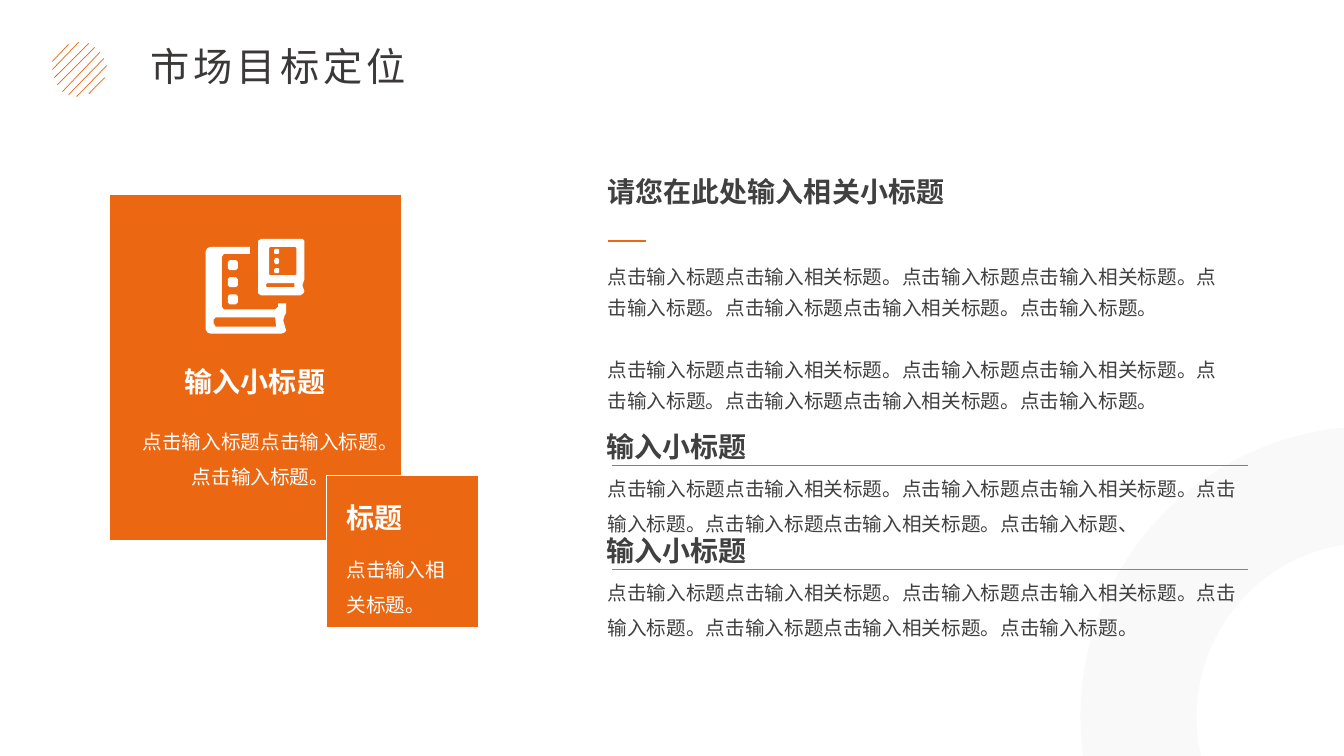
from dataclasses import dataclass

from lxml import etree
from pptx import Presentation
from pptx import util as u
from pptx.dml import color
from pptx.enum import lang, shapes, text
from pptx.oxml import ns

Pt = u.Pt


@dataclass(frozen=True)
class Theme:
    font: str = "Arial"
    orange: str = "EC6712"
    white: str = "FFFFFF"
    ink: str = "404040"
    title_ink: str = "3B3838"
    gray: str = "7F7F7F"
    pale: str = "F2F2F2"
    title: int = 28
    heading: int = 20
    body: int = 14


THEME = Theme()
SENTENCE = "点击输入标题点击输入相关标题。"
BODY = SENTENCE * 2 + "点击输入标题。" + SENTENCE + "点击输入标题"
STRIPES = [
    (37.4, 49.7, 56.2, 30.2), (38.9, 55.4, 63.4, 31),
    (41, 60.5, 67.7, 33.8), (44.6, 65.5, 71.3, 37.4),
    (49, 67.7, 74.2, 41.8), (54.7, 69.1, 76.3, 46.8),
    (63.4, 67, 74.9, 55.4), (37.4, 43.9, 49, 31.7),
]


def rgb(value):
    return color.RGBColor.from_string(value)


def add_text(container, box, paragraphs, size, ink, bold=False, spacing=None,
             centered=False, wrap=True, gap=0, tracking=0):
    shape = container.add_textbox(*map(Pt, box))
    frame = shape.text_frame
    frame.word_wrap = wrap
    frame.auto_size = text.MSO_AUTO_SIZE.SHAPE_TO_FIT_TEXT
    for index, words in enumerate(paragraphs):
        paragraph = frame.add_paragraph() if index else frame.paragraphs[0]
        if index:
            paragraph.space_before = Pt(gap)
        if spacing:
            paragraph.line_spacing = spacing
        if centered:
            paragraph.alignment = text.PP_ALIGN.CENTER
        run = paragraph.add_run()
        run.text = words
        font = run.font
        font.name = THEME.font
        font.size = Pt(size)
        font.bold = bold
        font.color.rgb = rgb(ink)
        font.language_id = lang.MSO_LANGUAGE_ID.SIMPLIFIED_CHINESE
        properties = run._r.get_or_add_rPr()
        etree.SubElement(properties, ns.qn("a:ea"), typeface=THEME.font)
        if tracking:
            properties.set("spc", str(tracking * 100))


def add_heading(container, box, words, ink, **options):
    add_text(container, box, [words], THEME.heading, ink, bold=True, **options)


def add_body(container, box, paragraphs, ink, spacing=1.5, **options):
    add_text(container, box, paragraphs, THEME.body, ink, spacing=spacing, **options)


def add_line(container, ends, ink, width):
    line = container.add_connector(shapes.MSO_CONNECTOR.STRAIGHT, *map(Pt, ends))
    line.line.color.rgb = rgb(ink)
    line.line.width = Pt(width)
    etree.SubElement(line._element.spPr, ns.qn("a:effectLst"))


def paint(shape, fill, outline=None, width=0):
    shape.shadow.inherit = False
    shape.fill.solid()
    shape.fill.fore_color.rgb = rgb(fill)
    if outline:
        shape.line.color.rgb = rgb(outline)
        shape.line.width = Pt(width)
    else:
        shape.line.fill.background()


def add_card(container, box, width):
    card = container.add_shape(shapes.MSO_SHAPE.RECTANGLE, *map(Pt, box))
    paint(card, THEME.orange, THEME.white, width)


def add_ring(container):
    ring = container.add_shape(
        shapes.MSO_SHAPE.DONUT, Pt(771.8), Pt(304.6), Pt(414.7), Pt(414.7))
    ring.adjustments[0] = 0.2
    paint(ring, THEME.pale)
    fill = ring._element.spPr.find(ns.qn("a:solidFill"))
    etree.SubElement(fill[0], ns.qn("a:alpha"), val="40000")


def rounded(left, top, right, bottom, cut=1):
    return [
        (left + cut, top), (right - cut, top), (right, top + cut),
        (right, bottom - cut), (right - cut, bottom), (left + cut, bottom),
        (left, bottom - cut), (left, top + cut),
    ]


def add_book_icon(container):
    large_book = [
        (209, 245), (248, 245), (248, 252), (222, 252), (220, 255), (220, 304),
        (222, 307), (273, 307), (276, 304), (276, 301), (284, 301), (284, 310),
        (282, 314), (281, 318), (283, 325), (283.5, 328), (282, 330), (279, 331),
        (209, 331), (205.5, 330), (204, 327), (204, 249), (205.5, 246),
    ]
    small_book = [
        (259, 237), (300, 237), (302, 239), (302, 277), (301, 280), (300, 283),
        (301, 286), (301.5, 289), (301, 291), (298, 293), (259, 293), (256, 291),
        (256, 239),
    ]
    large_pages = [
        (214, 315), (212, 317), (212, 321), (214, 324), (274, 324), (273, 315)]
    small_pages = [
        (265, 281), (264, 282), (264, 284), (265, 285), (292, 285), (292, 281)]
    contours = [large_book, small_book, large_pages, small_pages,
                rounded(267, 245, 294, 273)]
    contours += [rounded(226, top, 236, top + 10, 2) for top in (258, 275, 292)]
    contours += [rounded(272, top, 277, top + 5) for top in (247, 256.5, 266)]
    builder = None
    for start, *points in contours:
        if builder is None:
            builder = container.build_freeform(*start, scale=Pt(0.72))
        else:
            builder.move_to(*start)
        builder.add_line_segments(points, close=True)
    paint(builder.convert_to_shape(), THEME.white)


def add_section(container, top, ending, ink, width):
    group = container.add_group_shape().shapes
    add_body(group, (427, top + 25.7, 464.4, 55.4), [BODY + ending], THEME.ink)
    add_heading(group, (426.2, top, 466.6, 31.7), "输入小标题", THEME.ink)
    add_line(group, (437, top + 29.5, 891.4, top + 29.5), ink, width)


def add_stripes(container):
    group = container.add_group_shape().shapes
    for ends in STRIPES:
        add_line(group, ends, THEME.orange, 0.5)


def add_small_card(container):
    group = container.add_group_shape().shapes
    add_card(group, (233.3, 339.8, 108.7, 108.7), 1)
    add_body(group, (240.5, 386.6, 92.2, 55.4), ["点击输入相关标题。"], THEME.white)
    add_heading(group, (240.5, 354.2, 92.2, 31.7), "标题", THEME.white)


def main():
    presentation = Presentation()
    presentation.slide_width = Pt(960)
    presentation.slide_height = Pt(540)
    slide = presentation.slides.add_slide(presentation.slide_layouts[6])
    container = slide.shapes

    add_text(container, (100.1, 30.2, 202, 38.9), ["市场目标定位"], THEME.title,
             THEME.title_ink, spacing=0.9, tracking=3)
    add_stripes(container)
    add_ring(container)
    add_card(container, (77, 137.5, 211, 249.8), 3)
    add_body(container, (427, 180.7, 456.5, 117.4), [BODY + "。"] * 2, THEME.ink,
             spacing=1.3, gap=23)
    add_small_card(container)
    add_heading(container, (427, 121, 342.7, 31.7), "请您在此处输入相关小标题", THEME.ink)
    add_line(container, (434.2, 172.1, 461.5, 172.1), THEME.orange, 2)
    add_section(container, 303.1, "、", THEME.gray, 0.75)
    add_section(container, 377.3, "。", THEME.orange, 1)
    add_book_icon(container)
    add_heading(container, (123.1, 257, 118.1, 31.7), "输入小标题", THEME.white,
                centered=True, wrap=False)
    add_body(container, (94.3, 295.2, 183.6, 55.4),
             ["点击输入标题点击输入标题。点击输入标题。"], THEME.white, centered=True)
    presentation.save("out.pptx")


if __name__ == "__main__":
    main()
